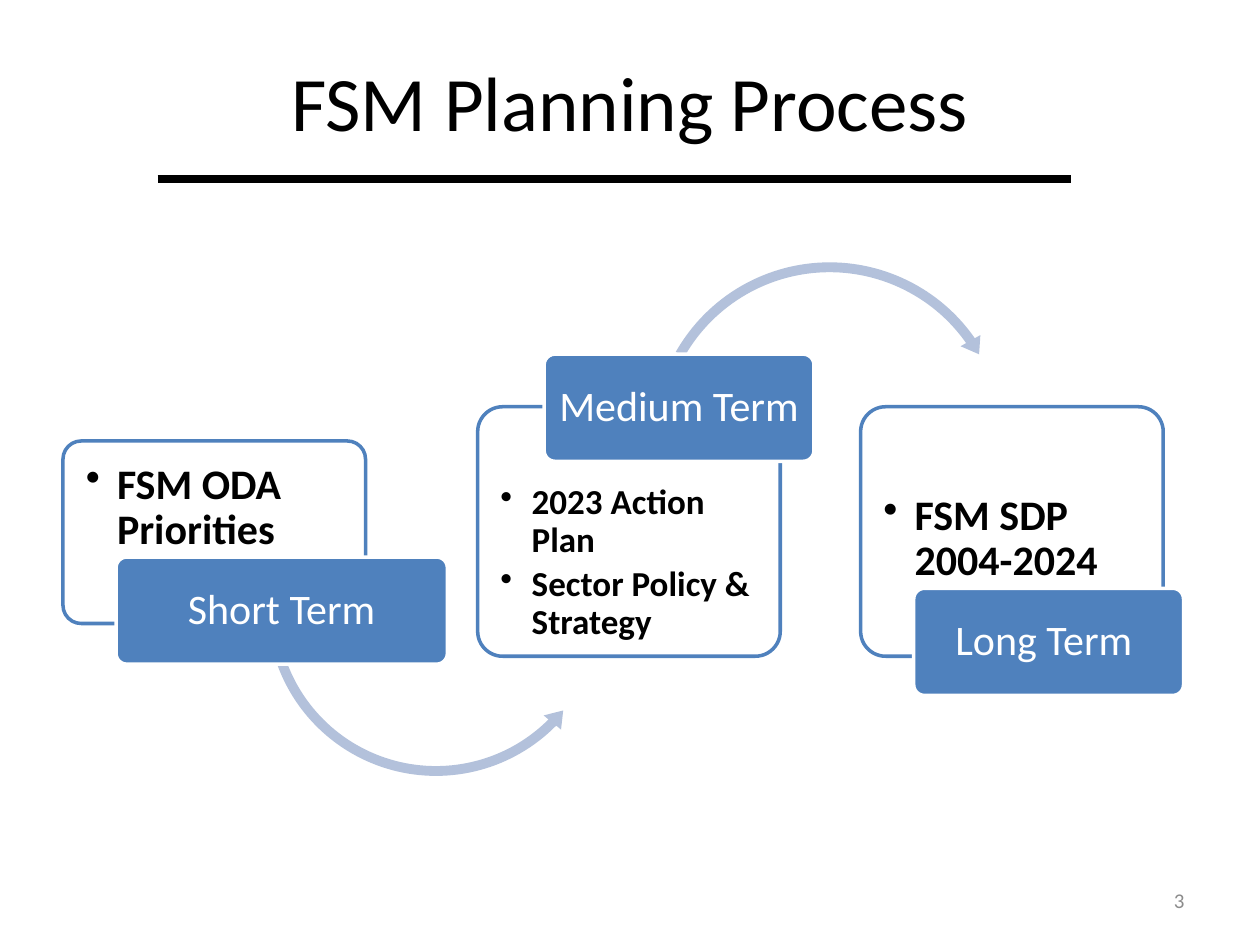
from lxml import etree
from pptx import Presentation
from pptx import util as u
from pptx.dml.color import RGBColor
from pptx.enum import shapes, text
from pptx.oxml.ns import qn

# Content: lengths in cm
TITLE = "FSM Planning Process"
STAGES = [
    dict(card=(1.27, 8.89, 3.68), label=(2.34, 11.23, 6.68), name="Short Term",
         list_top=8.97, size=24, items=["FSM ODA Priorities"],
         arrow=(shapes.MSO_SHAPE.LEFT_CIRCULAR_ARROW, 5.26, 8.71, 7.06,
                (0.028, 3.395, 26.853, 95.948, 0.032))),
    dict(card=(9.63, 8.2, 5.03), label=(10.97, 7.14, 5.44), name="Medium Term",
         list_top=9.4, size=20, items=["2023 Action Plan", "Sector Policy & Strategy"],
         arrow=(shapes.MSO_SHAPE.CIRCULAR_ARROW, 13.03, 5.16, 7.39,
                (0.027, 3.23, 195.015, 125.755, 0.031))),
    dict(card=(17.35, 8.2, 5.03), label=(18.42, 11.86, 5.44), name="Long Term ",
         list_top=9.6, size=24, items=["FSM SDP 2004-2024"], arrow=None),
]
CARD_WIDTH, LABEL_HEIGHT, CORNER = 6.1, 2.16, 0.1
FONT = "Calibri"
BLACK = RGBColor(0, 0, 0)
WHITE = RGBColor(255, 255, 255)
BLUE = RGBColor(0x4F, 0x81, 0xBD)
PALE_BLUE = RGBColor(0xB3, 0xC1, 0xDB)
GRAY = RGBColor(0x8C, 0x8C, 0x8C)


def cm(*lengths):
    return [u.Cm(length) for length in lengths]


def style(paragraph, size, color, align, bold=False):
    font = paragraph.font
    font.name, font.size, font.bold = FONT, u.Pt(size), bold
    font.color.rgb = color
    paragraph.alignment = align


def set_margins(frame, horizontal, vertical):
    frame.word_wrap = True
    frame.margin_left = frame.margin_right = u.Cm(horizontal)
    frame.margin_top = frame.margin_bottom = u.Cm(vertical)


def add_shape(slide, kind, box, fill, line=None, adjustments=(CORNER,)):
    shape = slide.shapes.add_shape(kind, *cm(*box))
    shape.shadow.inherit = False
    for index, value in enumerate(adjustments):
        shape.adjustments[index] = value
    shape.fill.solid()
    shape.fill.fore_color.rgb = fill
    if line is None:
        shape.line.fill.background()
    else:
        shape.line.color.rgb = line
        shape.line.width = u.Pt(2)
    return shape


def add_list(slide, box, items, size):
    frame = slide.shapes.add_textbox(*cm(*box)).text_frame
    set_margins(frame, 0.36, 0.36)
    frame.text = "\n".join(items)
    for paragraph in frame.paragraphs:
        style(paragraph, size, BLACK, text.PP_ALIGN.LEFT, bold=True)
        paragraph.line_spacing = 0.9
        paragraph.space_after = u.Pt(round(size * 0.18, 1))
        properties = paragraph._p.get_or_add_pPr()
        properties.set("marL", str(u.Cm(0.63)))
        properties.set("indent", str(-u.Cm(0.63)))
        bullet = etree.Element(qn("a:buChar"), char="•")
        properties.find(qn("a:defRPr")).addprevious(bullet)


def add_stage(slide, stage):
    rounded = shapes.MSO_SHAPE.ROUNDED_RECTANGLE
    left, top, height = stage["card"]
    add_shape(slide, rounded, (left, top, CARD_WIDTH, height), WHITE, BLUE)
    add_list(slide, (left + 0.1, stage["list_top"], CARD_WIDTH - 0.2, 2.8),
             stage["items"], stage["size"])
    if stage["arrow"]:
        kind, x, y, side, adjustments = stage["arrow"]
        add_shape(slide, kind, (x, y, side, side), PALE_BLUE, adjustments=adjustments)
    label = add_shape(slide, rounded, (*stage["label"], LABEL_HEIGHT), BLUE, WHITE)
    frame = label.text_frame
    set_margins(frame, 0.13, 0.08)
    frame.vertical_anchor = text.MSO_ANCHOR.MIDDLE
    frame.text = stage["name"]
    style(frame.paragraphs[0], 24, WHITE, text.PP_ALIGN.CENTER)
    frame.paragraphs[0].line_spacing = 0.9


def main():
    presentation = Presentation()
    presentation.slide_width, presentation.slide_height = cm(25.4, 19.05)
    slide = presentation.slides.add_slide(presentation.slide_layouts[5])

    # Title and rule below it
    title = slide.shapes.title
    title.left, title.top, title.width, title.height = cm(1.27, 0.43, 22.86, 3.18)
    title.text_frame.text = TITLE
    title.text_frame.vertical_anchor = text.MSO_ANCHOR.MIDDLE
    style(title.text_frame.paragraphs[0], 44, BLACK, text.PP_ALIGN.CENTER)

    # Planning stages
    for stage in STAGES:
        add_stage(slide, stage)

    # Slide number
    frame = slide.shapes.add_textbox(*cm(18.2, 17.65, 5.93, 1.01)).text_frame
    frame.word_wrap = True
    frame.vertical_anchor = text.MSO_ANCHOR.MIDDLE
    frame.text = "3"
    style(frame.paragraphs[0], 12, GRAY, text.PP_ALIGN.RIGHT)

    rule = slide.shapes.add_connector(shapes.MSO_CONNECTOR.STRAIGHT,
                                      *cm(3.18, 3.61, 21.59, 3.61))
    rule.line.color.rgb = BLACK
    rule.line.width = u.Pt(4.5)
    etree.SubElement(rule._element.spPr, qn("a:effectLst"))

    presentation.save("out.pptx")


if __name__ == "__main__":
    main()
